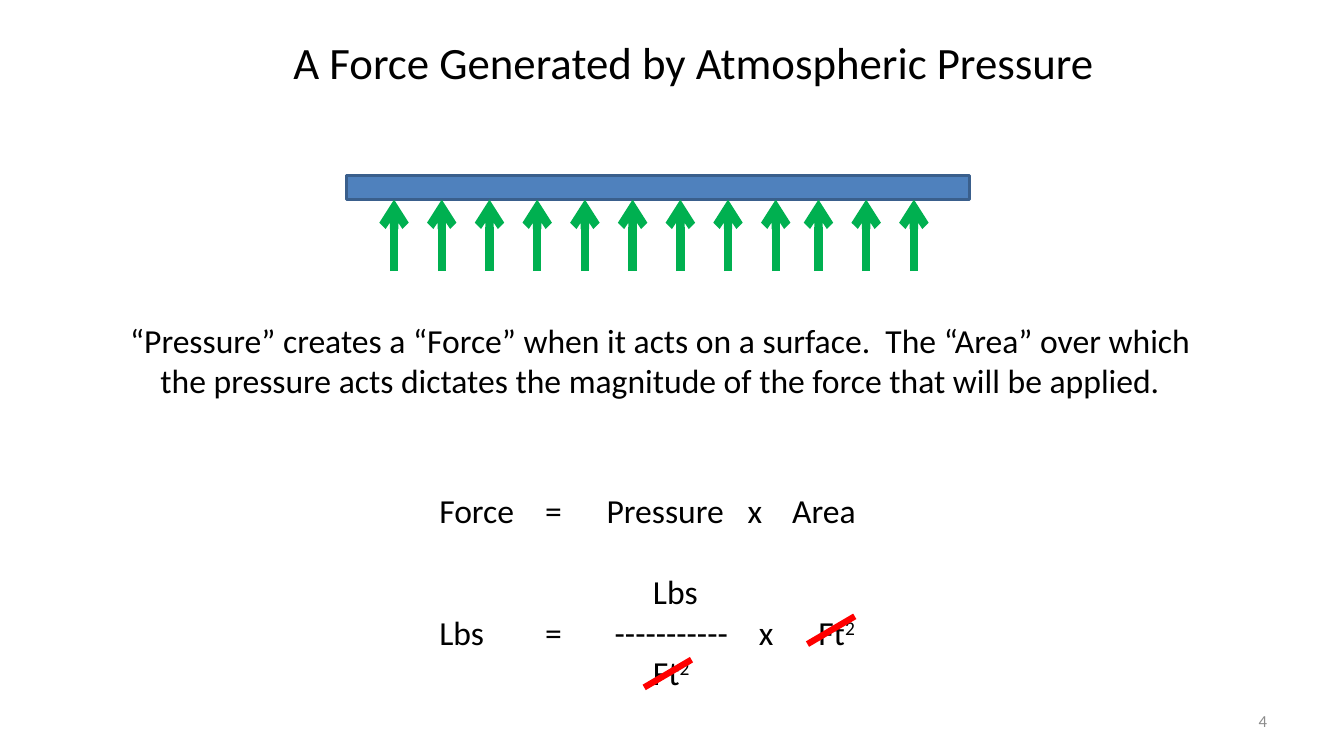
from dataclasses import dataclass

from lxml.etree import SubElement
from pptx import Presentation
from pptx.dml.color import RGBColor
from pptx.enum.shapes import MSO_CONNECTOR, MSO_SHAPE
from pptx.enum.text import MSO_ANCHOR, MSO_AUTO_SIZE, PP_ALIGN
from pptx.oxml.ns import qn
from pptx.util import Inches, Pt


@dataclass(frozen=True)
class Theme:
    font: str = "Calibri"
    text: str = "000000"
    muted: str = "8C8C8C"
    plate: str = "4F81BD"
    plate_edge: str = "3A5F8C"
    arrow: str = "00B050"
    strike: str = "FF0000"
    title_size: float = 32
    body_size: float = 24
    number_size: float = 12
    blank_line: float = 29.3


@dataclass(frozen=True)
class Box:
    """Left, top, width and height in grid columns and rows."""
    left: float
    top: float
    width: float
    height: float


@dataclass(frozen=True)
class Stroke:
    """Start and end points in grid columns and rows."""
    start: tuple[float, float]
    end: tuple[float, float]
    color: str
    weight: float
    arrow: bool = False


@dataclass(frozen=True)
class EquationLine:
    """Text runs, with tab stops in columns from the text edge."""
    words: str
    tabs: tuple[float, ...]
    exponent: str = ""
    space_before: float = 0


THEME = Theme()
SLIDE_WIDTH, SLIDE_HEIGHT = Inches(13.33), Inches(7.5)

# Places on a grid of 100 columns by 100 rows
TITLE = Box(21.08, 3.87, 64.05, 8.53)
PLATE = Box(25.8, 23.2, 46.35, 3.2)
STATEMENT = Box(7.8, 41.6, 82.65, 12.13)
EQUATION = Box(31.95, 64.13, 33.38, 28.27)
NUMBER = Box(71.7, 92.67, 23.33, 5.33)
ARROW_RUNS = ((29.32, 9), (60.9, 3))
ARROW_STEP, ARROW_TOP, ARROW_BOTTOM = 3.55, 26.4, 35.87
STRIKE_STARTS = ((47.93, 90.93), (60.08, 85.2))
STRIKE_WIDTH, STRIKE_HEIGHT = 3.52, 3.67

EQUATION_LINES = (
    EquationLine("Force\t=\tPressure\tx\tArea", (7.88, 12.45, 22.95, 26.25)),
    EquationLine("\tLbs", (15.9,), space_before=THEME.blank_line),
    EquationLine("Lbs\t=\t-----------\tx\tFt", (7.88, 13.05, 23.78, 28.2), "2"),
    EquationLine("\tFt", (15.9,), "2"),
)


def column(count: float) -> int:
    return round(SLIDE_WIDTH * count / 100)


def row(count: float) -> int:
    return round(SLIDE_HEIGHT * count / 100)


def bounds(box: Box) -> tuple[int, int, int, int]:
    return column(box.left), row(box.top), column(box.width), row(box.height)


def apply_format(target, values: dict) -> None:
    for name, value in values.items():
        setattr(target, name, value)


def add_run(paragraph, text: str, size: float, color: str = THEME.text):
    run = paragraph.add_run()
    run.text = text
    apply_format(run.font, {"name": THEME.font, "size": Pt(size)})
    run.font.color.rgb = RGBColor.from_string(color)
    return run


def format_frame(shape, anchor=MSO_ANCHOR.TOP):
    frame = shape.text_frame
    apply_format(frame, {"word_wrap": True, "vertical_anchor": anchor,
                         "auto_size": MSO_AUTO_SIZE.NONE})
    return frame


def add_text(slide, box: Box, text: str, size: float, alignment,
             color: str = THEME.text, anchor=MSO_ANCHOR.TOP) -> None:
    frame = format_frame(slide.shapes.add_textbox(*bounds(box)), anchor)
    paragraph = frame.paragraphs[0]
    paragraph.alignment = alignment
    add_run(paragraph, text, size, color)


def add_title(slide, text: str) -> None:
    title = slide.shapes.title
    left, top, width, height = bounds(TITLE)
    apply_format(title, {"left": left, "top": top, "width": width, "height": height})
    paragraph = format_frame(title).paragraphs[0]
    paragraph.alignment = PP_ALIGN.LEFT
    add_run(paragraph, text, THEME.title_size)


def add_plate(slide) -> None:
    plate = slide.shapes.add_shape(MSO_SHAPE.RECTANGLE, *bounds(PLATE))
    plate.shadow.inherit = False
    plate.fill.solid()
    plate.fill.fore_color.rgb = RGBColor.from_string(THEME.plate)
    plate.line.color.rgb = RGBColor.from_string(THEME.plate_edge)
    plate.line.width = Pt(2)


def add_strokes(slide, strokes: list[Stroke]) -> None:
    group = slide.shapes.add_group_shape()
    for stroke in strokes:
        connector = group.shapes.add_connector(
            MSO_CONNECTOR.STRAIGHT,
            column(stroke.start[0]), row(stroke.start[1]),
            column(stroke.end[0]), row(stroke.end[1]))
        connector.line.color.rgb = RGBColor.from_string(stroke.color)
        connector.line.width = Pt(stroke.weight)
        if stroke.arrow:
            SubElement(connector.line._get_or_add_ln(), qn("a:tailEnd"), type="arrow")
        SubElement(connector._element.spPr, qn("a:effectLst"))


def add_equation(slide) -> None:
    frame = format_frame(slide.shapes.add_textbox(*bounds(EQUATION)))
    for index, line in enumerate(EQUATION_LINES):
        paragraph = frame.add_paragraph() if index else frame.paragraphs[0]
        apply_format(paragraph, {"alignment": PP_ALIGN.LEFT,
                                 "space_before": Pt(line.space_before)})
        tab_list = SubElement(paragraph._p.get_or_add_pPr(), qn("a:tabLst"))
        for stop in line.tabs:
            SubElement(tab_list, qn("a:tab"), pos=str(column(stop)), algn="l")
        add_run(paragraph, line.words, THEME.body_size)
        if line.exponent:
            exponent = add_run(paragraph, line.exponent, THEME.body_size)
            exponent._r.get_or_add_rPr().set("baseline", "30000")


def main() -> None:
    presentation = Presentation()
    apply_format(presentation, {"slide_width": SLIDE_WIDTH, "slide_height": SLIDE_HEIGHT})
    slide = presentation.slides.add_slide(presentation.slide_layouts.get_by_name("Title Only"))

    # Title
    add_title(slide, "A Force Generated by Atmospheric Pressure")

    # Plate pushed up by a row of pressure arrows
    add_plate(slide)
    arrow_columns = [first + ARROW_STEP * index
                     for first, count in ARROW_RUNS for index in range(count)]
    add_strokes(slide, [Stroke((x, ARROW_BOTTOM), (x, ARROW_TOP), THEME.arrow, 6, True)
                        for x in arrow_columns])

    # Statement, equation and slide number
    add_text(slide, STATEMENT,
             "“Pressure” creates a “Force” when it acts on a surface.  The “Area” over which "
             "the pressure acts dictates the magnitude of the force that will be applied.",
             THEME.body_size, PP_ALIGN.CENTER)
    add_equation(slide)
    add_text(slide, NUMBER, "4", THEME.number_size, PP_ALIGN.RIGHT,
             THEME.muted, MSO_ANCHOR.MIDDLE)

    # Strokes that cancel the units
    add_strokes(slide, [Stroke((x, y), (x + STRIKE_WIDTH, y - STRIKE_HEIGHT), THEME.strike, 4.5)
                        for x, y in STRIKE_STARTS])

    presentation.save("out.pptx")


if __name__ == "__main__":
    main()
